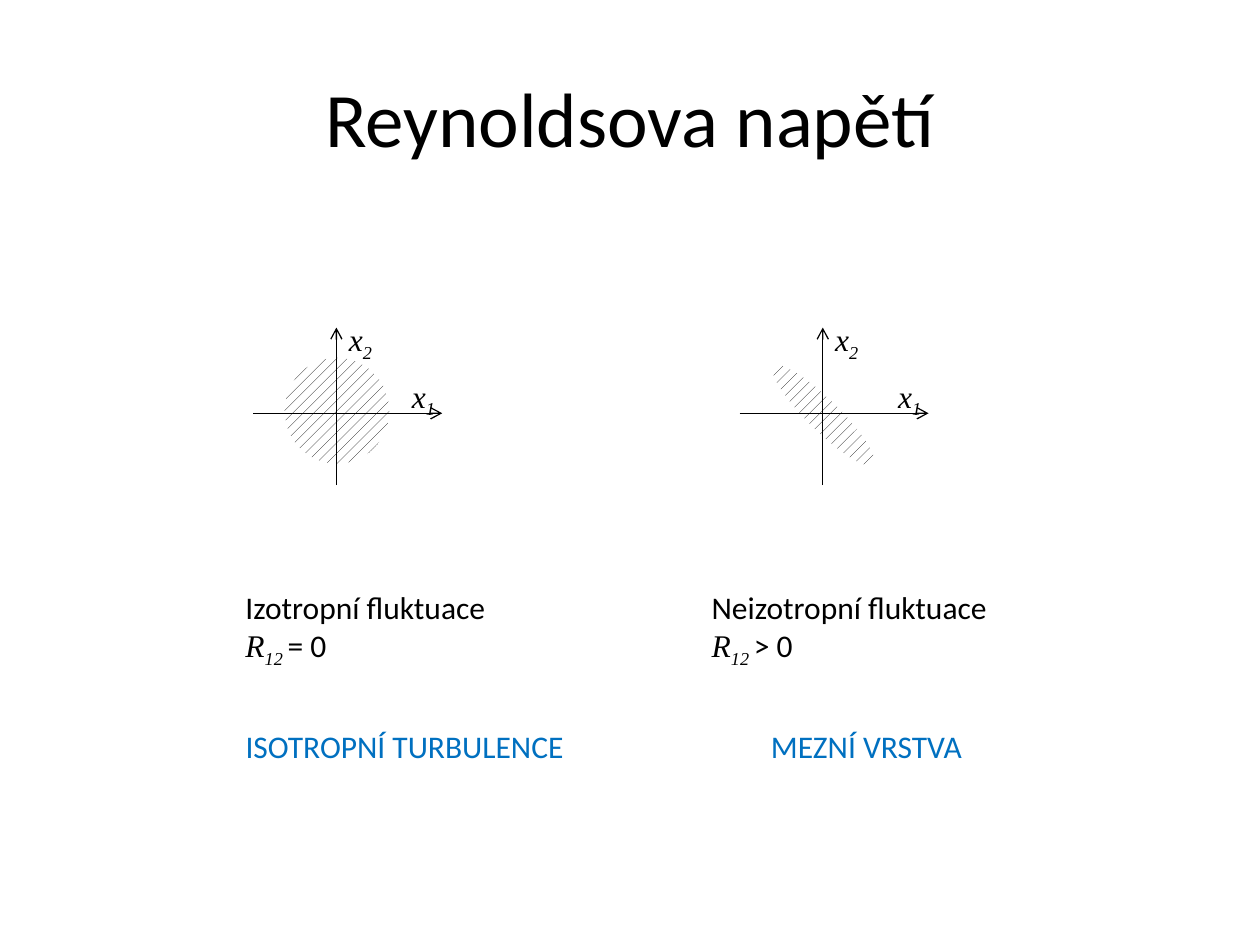
from dataclasses import dataclass

from lxml.etree import SubElement
from pptx import Presentation
from pptx.dml.color import RGBColor
from pptx.enum.dml import MSO_PATTERN
from pptx.enum.shapes import MSO_CONNECTOR, MSO_SHAPE
from pptx.enum.text import MSO_ANCHOR, MSO_AUTO_SIZE, PP_ALIGN
from pptx.oxml.ns import qn
from pptx.util import Inches, Pt


@dataclass(frozen=True)
class Theme:
    ink: RGBColor = RGBColor(0x00, 0x00, 0x00)
    paper: RGBColor = RGBColor(0xFF, 0xFF, 0xFF)
    accent: RGBColor = RGBColor(0x00, 0x70, 0xC0)
    title_size: int = 44
    body_size: int = 18
    axis_width: float = 0.75
    body_font: str = "Calibri"
    math_font: str = "Times New Roman"


def add_run(paragraph, text, *, font, size, color, italic=False, subscript=False):
    run = paragraph.add_run()
    run.text = text
    run.font.name = font
    run.font.size = Pt(size)
    run.font.color.rgb = color
    run.font.italic = italic
    if subscript:
        run._r.get_or_add_rPr().set("baseline", "-25000")


class SlideBuilder:
    def __init__(self, slide, theme):
        self.slide = slide
        self.theme = theme

    def title(self, text, left, top, width, height):
        box = self.slide.shapes.add_textbox(*map(Inches, (left, top, width, height)))
        frame = box.text_frame
        frame.word_wrap = True
        frame.vertical_anchor = MSO_ANCHOR.MIDDLE
        heading = frame.paragraphs[0]
        heading.alignment = PP_ALIGN.CENTER
        add_run(heading, text, font=self.theme.body_font,
                size=self.theme.title_size, color=self.theme.ink)

    def label(self, lines, left, top, width, height, color=None, parent=None):
        """Each line is a list of (text, style), style being plain, math or sub."""
        shapes = (parent or self.slide).shapes
        frame = shapes.add_textbox(*map(Inches, (left, top, width, height))).text_frame
        frame.word_wrap = False
        frame.auto_size = MSO_AUTO_SIZE.SHAPE_TO_FIT_TEXT
        for index, line in enumerate(lines):
            paragraph = frame.add_paragraph() if index else frame.paragraphs[0]
            for text, style in line:
                is_math = style != "plain"
                add_run(paragraph, text,
                        font=self.theme.math_font if is_math else self.theme.body_font,
                        size=self.theme.body_size, color=color or self.theme.ink,
                        italic=is_math, subscript=style == "sub")

    def cloud(self, parent, left, top, width, height, rotation):
        ellipse = parent.shapes.add_shape(
            MSO_SHAPE.OVAL, *map(Inches, (left, top, width, height)))
        ellipse.shadow.inherit = False
        ellipse.rotation = rotation
        ellipse.fill.patterned()
        ellipse.fill.pattern = MSO_PATTERN.PERCENT_20
        ellipse.fill.fore_color.rgb = self.theme.ink
        ellipse.fill.back_color.rgb = self.theme.paper
        ellipse.line.fill.background()

    def axis(self, parent, start, end):
        arrow = parent.shapes.add_connector(
            MSO_CONNECTOR.STRAIGHT, *map(Inches, (*start, *end)))
        arrow.line.color.rgb = self.theme.ink
        arrow.line.width = Pt(self.theme.axis_width)
        properties = arrow._element.spPr
        SubElement(properties.find(qn("a:ln")), qn("a:tailEnd"), type="arrow")
        SubElement(properties, qn("a:effectLst"))

    def fluctuation_plot(self, x, y, cloud_box, rotation=0):
        """Draw a cloud and its two axes, which cross at x, y."""
        plot = self.slide.shapes.add_group_shape()
        self.cloud(plot, *cloud_box, rotation)
        self.axis(plot, (x, y + 0.57), (x, y - 0.68))
        self.axis(plot, (x - 0.66, y), (x + 0.84, y))
        for index, dx, dy in (("2", 0, -0.79), ("1", 0.5, -0.34)):
            self.label([[("x", "math"), (index, "sub")]],
                       x + dx, y + dy, 0.4, 0.4, parent=plot)


def main():
    theme = Theme()
    deck = Presentation()
    deck.slide_width, deck.slide_height = Inches(10), Inches(7.5)
    builder = SlideBuilder(deck.slides.add_slide(deck.slide_layouts[6]), theme)

    builder.title("Reynoldsova napětí", 0.5, 0.3, 9, 1.25)

    axis_y = 3.28
    builder.fluctuation_plot(6.53, axis_y, (6.41, 2.74, 0.25, 1.11), rotation=314.6)
    builder.fluctuation_plot(2.67, axis_y, (2.26, 2.84, 0.83, 0.84))

    for caption, relation, left, width in (
        ("Izotropní fluktuace", "= 0", 1.85, 2.13),
        ("Neizotropní fluktuace", "> 0", 5.55, 2.48),
    ):
        stress = [("R", "math"), ("12 ", "sub"), (relation, "plain")]
        builder.label([[(caption, "plain")], stress], left, 4.62, width, 0.71)

    for flow, left, width in (
        ("MEZNÍ VRSTVA", 6.02, 1.73),
        ("ISOTROPNÍ TURBULENCE", 1.85, 2.75),
    ):
        builder.label([[(flow, "plain")]], left, 5.72, width, 0.4, color=theme.accent)

    deck.save("out.pptx")


if __name__ == "__main__":
    main()
